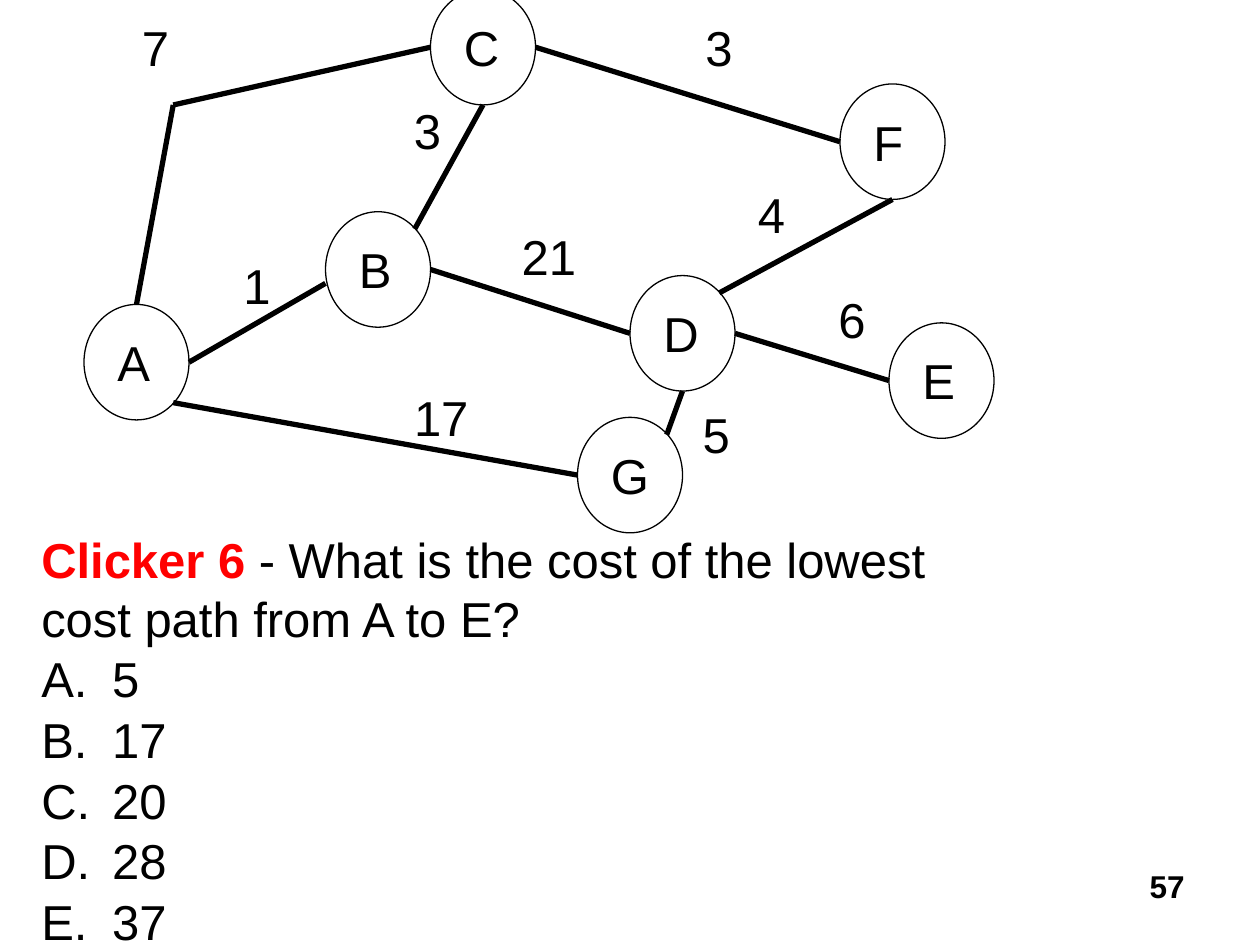
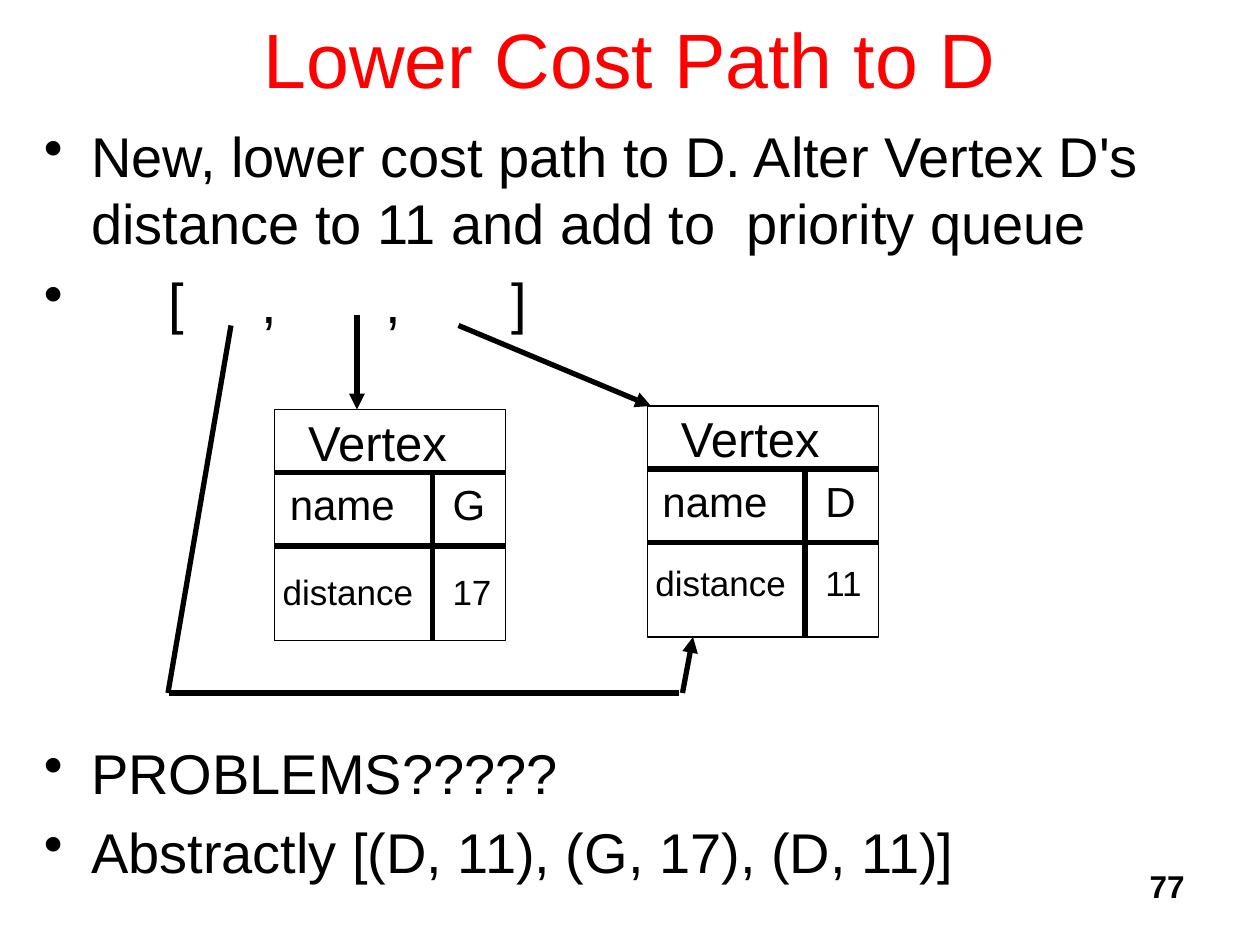
from lxml import etree
from pptx import Presentation
from pptx.dml.color import RGBColor
from pptx.enum.shapes import MSO_CONNECTOR, MSO_SHAPE
from pptx.enum.text import MSO_ANCHOR, PP_ALIGN
from pptx.oxml.ns import qn
from pptx.util import Pt

BLACK = RGBColor(0x00, 0x00, 0x00)
RED = RGBColor(0xFF, 0x00, 0x00)
FONT = "Arial"
STRAIGHT = MSO_CONNECTOR.STRAIGHT
ELLIPSE, RECTANGLE = MSO_SHAPE.OVAL, MSO_SHAPE.RECTANGLE
LEFT, CENTER, RIGHT = PP_ALIGN.LEFT, PP_ALIGN.CENTER, PP_ALIGN.RIGHT
TOP, MIDDLE = MSO_ANCHOR.TOP, MSO_ANCHOR.MIDDLE

TITLE_ONLY, BLANK = 5, 6
NODE_WIDTH, NODE_HEIGHT = 60, 66
CARD_SIDE = 132

NODES = {
    "A": (48, 174),
    "B": (186, 121),
    "C": (246, -6),
    "F": (480, 48),
    "D": (360, 157.5),
    "E": (508, 184.5),
    "G": (330, 238.5),
}
RIM = {
    "top": (0.5, 0),
    "left": (0, 0.5),
    "lower left": (0, 0.62),
    "bottom": (0.5, 1),
    "right": (1, 0.5),
    "upper right": (0.85, 0.15),
    "lower right": (0.85, 0.85),
}
EDGES = [
    ("A", "right", "B", "lower left"),
    ("B", "upper right", "C", "bottom"),
    ("C", "right", "F", "left"),
    ("F", "bottom", "D", "upper right"),
    ("D", "right", "E", "left"),
    ("D", "bottom", "G", "upper right"),
    ("B", "right", "D", "left"),
    ("A", "lower right", "G", "left"),
]
COSTS = [
    ("1", 132, 142.5),
    ("3", 229.5, 54),
    ("3", 396, 6.5),
    ("21", 291, 126),
    ("4", 426, 102),
    ("6", 472, 162),
    ("17", 229.5, 218),
    ("5", 394.5, 227.5),
    ("7", 74, 6.5),
]
ANSWERS = ["5", "17", "20", "28", "37"]


def rim_point(node, side):
    left, top = NODES[node]
    across, down = RIM[side]
    return left + across * NODE_WIDTH, top + down * NODE_HEIGHT


class Deck:
    def __init__(self):
        self.presentation = Presentation()
        self.presentation.slide_width = Pt(720)
        self.presentation.slide_height = Pt(540)
        self.slide = None

    def new_slide(self, layout, number):
        self.slide = self.presentation.slides.add_slide(
            self.presentation.slide_layouts[layout])
        self.text(number, 534, 492, 150, 36, 18, bold=True, align=RIGHT)

    def styled_run(self, paragraph, text, size, color=BLACK, bold=False):
        run = paragraph.add_run()
        run.text = text
        style = {"name": FONT, "size": Pt(size), "bold": bold}
        for key, value in style.items():
            setattr(run.font, key, value)
        run.font.color.rgb = color

    def text(self, text, left, top, width, height, size, bold=False,
             align=LEFT, wrap=True):
        frame = self.slide.shapes.add_textbox(
            Pt(left), Pt(top), Pt(width), Pt(height)).text_frame
        frame.word_wrap = wrap
        frame.paragraphs[0].alignment = align
        if text:
            self.styled_run(frame.paragraphs[0], text, size, bold=bold)
        return frame

    def title(self, text, left, top, width, height):
        title = self.slide.shapes.title
        place = {"left": left, "top": top, "width": width, "height": height}
        for key, value in place.items():
            setattr(title, key, Pt(value))
        title.text_frame.vertical_anchor = MIDDLE
        paragraph = title.text_frame.paragraphs[0]
        paragraph.alignment = CENTER
        self.styled_run(paragraph, text, 44, RED)

    def mark(self, paragraph, tag, indent, hanging, tabs=(), **attributes):
        properties = paragraph._p.get_or_add_pPr()
        properties.set("marL", str(Pt(indent)))
        properties.set("indent", str(Pt(-hanging)))
        etree.SubElement(properties, qn(tag), attributes)
        if tabs:
            stops = etree.SubElement(properties, qn("a:tabLst"))
            for tab in tabs:
                etree.SubElement(stops, qn("a:tab"), pos=str(Pt(tab)), algn="l")

    def outline(self, kind, left, top, width, height):
        shape = self.slide.shapes.add_shape(
            kind, Pt(left), Pt(top), Pt(width), Pt(height))
        shape.shadow.inherit = False
        shape.fill.background()
        shape.line.color.rgb = BLACK
        shape.line.width = Pt(0.75)

    def line(self, start, end, arrow=False):
        connector = self.slide.shapes.add_connector(
            STRAIGHT, *[Pt(value) for value in (*start, *end)])
        connector.line.color.rgb = BLACK
        connector.line.width = Pt(3)
        if arrow:
            etree.SubElement(connector.line._get_or_add_ln(),
                             qn("a:tailEnd"), type="triangle")
        etree.SubElement(connector._element.spPr, qn("a:effectLst"))

    def node(self, name):
        left, top = NODES[name]
        self.outline(ELLIPSE, left, top, NODE_WIDTH, NODE_HEIGHT)
        self.text(name, left + 12, top + 12.5, 35, 41, 28, wrap=False)

    def vertex_card(self, left, top, name, distance, distance_top):
        right, bottom = left + CARD_SIDE, top + CARD_SIDE
        divider = left + 90
        self.outline(RECTANGLE, left, top, CARD_SIDE, CARD_SIDE)
        for row in (36, 78):
            self.line((left, top + row), (right, top + row))
        self.line((divider, top + 36), (divider, bottom))
        self.text("Vertex", left + 12, top - 2, 104, 41, 28)
        rows = [("name", name, 1.5, 36, 24),
                ("distance", distance, -2.5, distance_top, 20)]
        for field, value, shift, row, size in rows:
            self.text(field, left + shift, top + row, 92, 34, size)
            self.text(value, left + 94.5, top + row, 46, 34, size)


def build_question(deck):
    deck.new_slide(BLANK, "57")
    for name in NODES:
        deck.node(name)
    for start, start_side, end, end_side in EDGES:
        deck.line(rim_point(start, start_side), rim_point(end, end_side))
    bend = (99, 60)
    deck.line(rim_point("A", "top"), bend)
    deck.line(bend, rim_point("C", "left"))
    for cost, left, top in COSTS:
        deck.text(cost, left, top, 15 + 15.5 * len(cost), 41, 28, wrap=False)

    question = deck.text("", 16.5, 299, 572, 250, 28)
    question.vertical_anchor = TOP
    prompt = question.paragraphs[0]
    prompt.space_before = Pt(1)
    deck.styled_run(prompt, "Clicker 6 ", 28, RED, True)
    deck.styled_run(
        prompt, "- What is the cost of the lowest cost path from A to E?", 28)
    for answer in ANSWERS:
        choice = question.add_paragraph()
        choice.space_before = Pt(1)
        deck.styled_run(choice, answer, 28)
        deck.mark(choice, "a:buAutoNum", 40.5, 40.5, type="alphaUcPeriod")


def build_lower_cost(deck):
    deck.new_slide(TITLE_ONLY, "77")
    deck.title("Lower Cost Path to D", 54, -12, 612, 90)
    body = deck.text("", 18, 66, 684, 102, 32)
    queue_tabs = (71.5, 124.5, 195.5, 267)
    bullets = [
        ("New, lower cost path to D. Alter Vertex D's distance to 11 "
         "and add to  priority queue", 0, 27, ()),
        ("\t[\t,\t,\t]", 6.4, 0, queue_tabs),
        ("PROBLEMS?????", 231, 27, ()),
        ("Abstractly [(D, 11), (G, 17), (D, 11)]", 6.4, 27, ()),
    ]
    for index, (text, gap, indent, tabs) in enumerate(bullets):
        bullet = body.add_paragraph() if index else body.paragraphs[0]
        bullet.space_before = Pt(gap)
        deck.styled_run(bullet, text, 32)
        deck.mark(bullet, "a:buChar", indent, indent, tabs, char="•")

    deck.line((204, 180), (204, 234), arrow=True)
    deck.line((262, 186), (372, 232), arrow=True)
    deck.vertex_card(157, 234, "G", "17", 88.5)
    deck.vertex_card(370, 232, "D", "11", 85.5)
    deck.line((132, 186), (96, 396))
    deck.line((96.5, 396), (388, 396))
    deck.line((390, 396), (396, 364), arrow=True)


def main():
    deck = Deck()
    build_question(deck)
    build_lower_cost(deck)
    deck.presentation.save("out.pptx")


if __name__ == "__main__":
    main()
